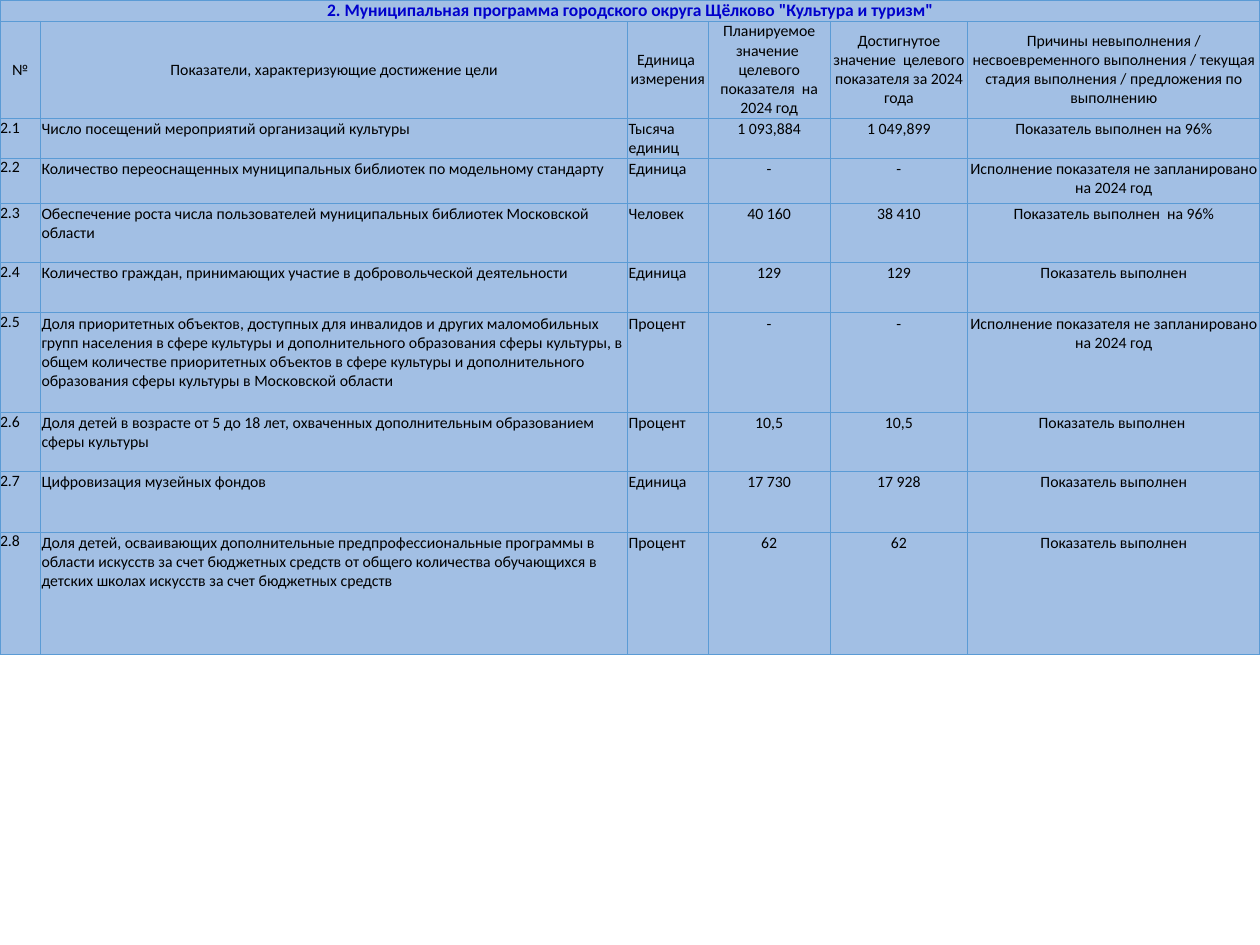
from lxml.etree import SubElement
from pptx import Presentation
from pptx.dml.color import RGBColor
from pptx.enum.text import MSO_ANCHOR as Anchor, PP_ALIGN as Align
from pptx.oxml.ns import qn
from pptx.util import Inches, Pt

TITLE_BLUE = RGBColor(0x00, 0x00, 0xCC)
BLACK = RGBColor(0x00, 0x00, 0x00)
CELL_BLUE = RGBColor(0xA2, 0xBF, 0xE4)
BORDER_BLUE = RGBColor(0x5B, 0x9B, 0xD5)

COLUMN_WIDTHS = [0.32, 4.66, 0.64, 0.97, 1.09, 2.32]
ROW_HEIGHTS = [0.17, 0.77, 0.31, 0.36, 0.47, 0.4, 0.79, 0.47, 0.48, 0.97]
FIRST_CENTERED_COLUMN = 3

TITLE = '2. Муниципальная программа городского округа Щёлково "Культура и туризм"'
HEADERS = [
    "№",
    "Показатели, характеризующие достижение цели",
    "Единица  измерения",
    "Планируемое значение  целевого показателя  на 2024 год",
    "Достигнутое значение  целевого показателя за 2024 года",
    "Причины невыполнения / несвоевременного выполнения / текущая стадия "
    "выполнения / предложения по выполнению",
]
DONE = "Показатель выполнен"
NOT_PLANNED = "Исполнение показателя не запланировано на 2024 год"
INDICATORS = [
    ("2.1", "Число посещений мероприятий организаций культуры",
     "Тысяча единиц", "1 093,884", "1 049,899", "Показатель выполнен на 96%"),
    ("2.2", "Количество переоснащенных муниципальных библиотек по модельному стандарту",
     "Единица", "-", "-", NOT_PLANNED),
    ("2.3", "Обеспечение роста числа пользователей муниципальных библиотек "
     "Московской области",
     "Человек", "40 160", "38 410", "Показатель выполнен  на 96%"),
    ("2.4", "Количество граждан, принимающих участие в добровольческой деятельности",
     "Единица", "129", "129", DONE),
    ("2.5", "Доля приоритетных объектов, доступных для инвалидов и других "
     "маломобильных групп населения в сфере культуры и дополнительного "
     "образования сферы культуры, в общем количестве приоритетных объектов в "
     "сфере культуры и дополнительного образования сферы культуры в Московской области",
     "Процент", "-", "-", NOT_PLANNED),
    ("2.6", "Доля детей в возрасте от 5 до 18 лет, охваченных дополнительным "
     "образованием сферы культуры",
     "Процент", "10,5", "10,5", "Показатель выполнен "),
    ("2.7", "Цифровизация музейных фондов", "Единица", "17 730", "17 928", DONE),
    ("2.8", "Доля детей, осваивающих дополнительные предпрофессиональные "
     "программы в области искусств за счет бюджетных средств от общего "
     "количества обучающихся в детских школах искусств за счет бюджетных средств",
     "Процент", "62", "62", DONE),
]


def style_cell(cell):
    properties = cell._tc.get_or_add_tcPr()
    for side in ("a:lnL", "a:lnR", "a:lnT", "a:lnB"):
        line = SubElement(properties, qn(side), w=str(Pt(0.5)))
        fill = SubElement(line, qn("a:solidFill"))
        SubElement(fill, qn("a:srgbClr"), val=str(BORDER_BLUE))
    cell.fill.solid()
    cell.fill.fore_color.rgb = CELL_BLUE


def write_cell(cell, text, alignment=Align.CENTER, anchor=Anchor.MIDDLE,
               inset=0, size=9, color=BLACK, bold=False):
    cell.margin_left = cell.margin_right = cell.margin_top = Inches(inset)
    cell.margin_bottom = 0
    cell.vertical_anchor = anchor
    paragraph = cell.text_frame.paragraphs[0]
    paragraph.alignment = alignment
    run = paragraph.add_run()
    run.text = text
    run.font.name = "Calibri"
    run.font.size = Pt(size)
    run.font.bold = bold
    run.font.color.rgb = color


def add_grid(slide):
    table = slide.shapes.add_table(
        len(ROW_HEIGHTS), len(COLUMN_WIDTHS), 0, 0,
        Inches(sum(COLUMN_WIDTHS)), Inches(sum(ROW_HEIGHTS))).table
    table.first_row = table.horz_banding = False
    for column, width in zip(table.columns, COLUMN_WIDTHS):
        column.width = Inches(width)
    for row, height in zip(table.rows, ROW_HEIGHTS):
        row.height = Inches(height)
    for cell in table.iter_cells():
        style_cell(cell)
    return table


def fill_table(table):
    title_cell = table.cell(0, 0)
    title_cell.merge(table.cell(0, len(COLUMN_WIDTHS) - 1))
    write_cell(title_cell, TITLE, size=10, color=TITLE_BLUE, bold=True)
    for column, text in enumerate(HEADERS):
        write_cell(table.cell(1, column), text)
    for row, indicator in enumerate(INDICATORS, start=2):
        for column, text in enumerate(indicator):
            centered = column >= FIRST_CENTERED_COLUMN
            write_cell(table.cell(row, column), text,
                       alignment=Align.CENTER if centered else Align.LEFT,
                       anchor=Anchor.TOP, inset=0.01 if column else 0)


def main():
    presentation = Presentation()
    presentation.slide_width = Inches(10)
    presentation.slide_height = Inches(7.5)
    slide = presentation.slides.add_slide(presentation.slide_layouts[6])
    fill_table(add_grid(slide))
    presentation.save("out.pptx")


if __name__ == "__main__":
    main()
